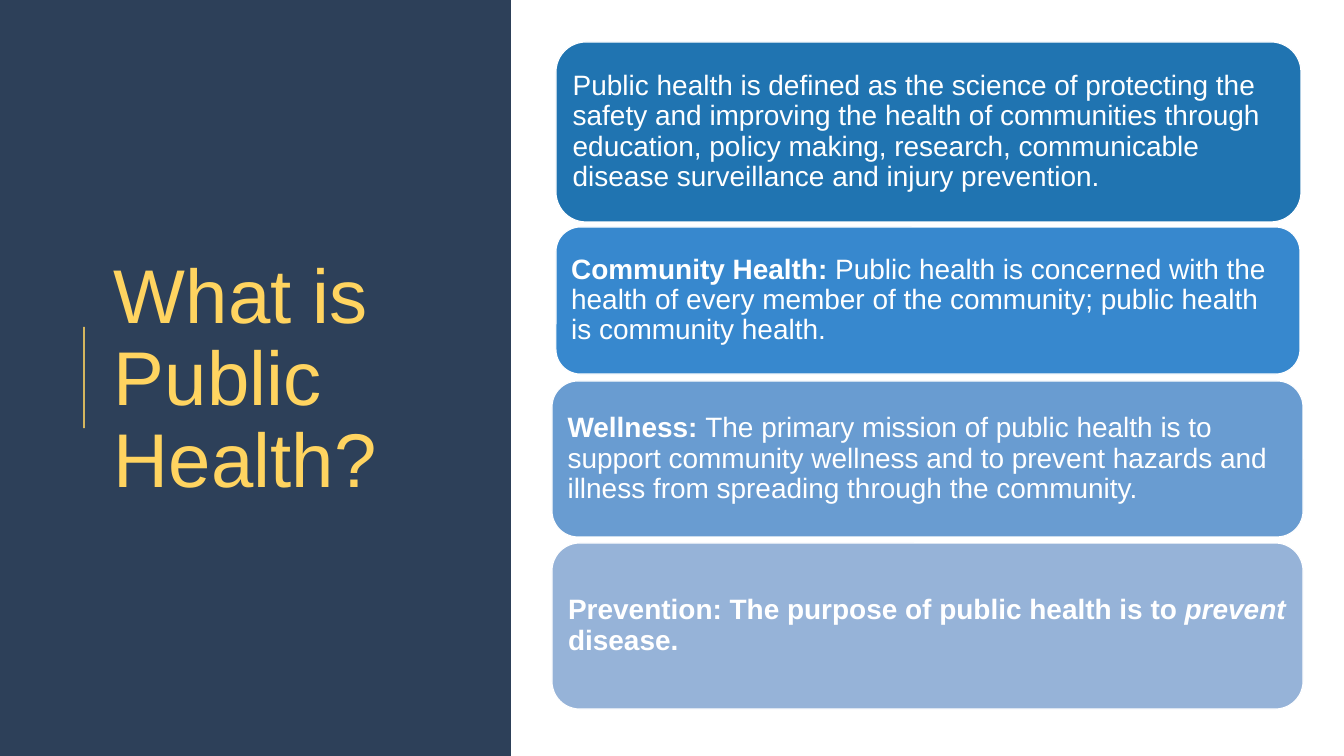
from pptx import Presentation
from pptx.dml.color import RGBColor
from pptx.enum.shapes import MSO_CONNECTOR, MSO_SHAPE
from pptx.enum.text import MSO_ANCHOR, MSO_AUTO_SIZE, PP_ALIGN
from pptx.oxml.ns import qn
from pptx.util import Pt
from lxml import etree

RECT, ROUNDED = MSO_SHAPE.RECTANGLE, MSO_SHAPE.ROUNDED_RECTANGLE
STRAIGHT = MSO_CONNECTOR.STRAIGHT
MIDDLE, LEFT = MSO_ANCHOR.MIDDLE, PP_ALIGN.LEFT
NO_FIT = MSO_AUTO_SIZE.NONE

PX = 11340  # EMU per px
FONT = "Arial"
COLORS = {
    "navy": "2D4059", "gold": "FFD460", "white": "FFFFFF",
    "definition": "2074B1", "community": "3788CE",
    "wellness": "699CD1", "prevention": "96B3D8",
}


def rgb(name):
    return RGBColor.from_string(COLORS[name])


def format_text(tf, size, color, inset_x, inset_y):
    tf.word_wrap = True
    tf.auto_size = NO_FIT
    tf.vertical_anchor = MIDDLE
    tf.margin_left = tf.margin_right = inset_x * PX
    tf.margin_top = tf.margin_bottom = inset_y * PX
    p = tf.paragraphs[0]
    p.alignment = LEFT
    p.line_spacing = 0.9
    for r in p.runs:
        r.font.name = FONT
        r.font.size = Pt(size)
        r.font.color.rgb = rgb(color)


prs = Presentation()
prs.slide_width, prs.slide_height = 1344 * PX, 756 * PX
s = prs.slides.add_slide(prs.slide_layouts[5])

# Title on the dark panel
title = s.shapes.title
title.left, title.top, title.width, title.height = (v * PX for v in (104, 78, 372, 606))
title.text_frame.text = "What is Public Health?"
format_text(title.text_frame, 68, "gold", 10, 5)

panel = s.shapes.add_shape(RECT, 0, 0, 511 * PX, 756 * PX)
panel.shadow.inherit = False
panel.fill.solid()
panel.fill.fore_color.rgb = rgb("navy")
panel.line.fill.background()
title.element.addprevious(panel.element)

# Accent line beside the title
accent = s.shapes.add_connector(STRAIGHT, 84 * PX, 428 * PX, 84 * PX, 327 * PX)
accent.line.color.rgb = rgb("gold")
accent.line.width = Pt(1.5)
props = accent.element.spPr
etree.SubElement(props.find(".//" + qn("a:srgbClr")), qn("a:alpha"), val="80000")
etree.SubElement(props, qn("a:effectLst"))

# Cards: colour, box in px, runs as (text, bold, italic)
cards = [
    ("definition", (556, 42, 745, 180), [
        ("Public health is defined as the science of protecting the safety and "
         "improving the health of communities through education, policy making, "
         "research, communicable disease surveillance and injury prevention.", False, False)]),
    ("community", (556, 227, 744, 147), [
        ("Community Health: ", True, False),
        ("Public health is concerned with the health of every member of the "
         "community; public health is community health.", False, False)]),
    ("wellness", (552, 381, 751, 156), [
        ("Wellness: ", True, False),
        ("The primary mission of public health is to support community wellness and "
         "to prevent hazards and illness from spreading through the community.", False, False)]),
    ("prevention", (552, 543, 751, 166), [
        ("Prevention: The purpose of public health is to ", True, False),
        ("prevent", True, True),
        (" disease.", True, False)]),
]
for color, box, runs in cards:
    card = s.shapes.add_shape(ROUNDED, *(v * PX for v in box))
    card.shadow.inherit = False
    card.fill.solid()
    card.fill.fore_color.rgb = rgb(color)
    card.line.color.rgb = rgb("white")
    card.line.width = Pt(1)
    p = card.text_frame.paragraphs[0]
    for text, bold, italic in runs:
        r = p.add_run()
        r.text = text
        r.font.bold, r.font.italic = bold, italic
    format_text(card.text_frame, 25, "white", 8, 8)

prs.save("out.pptx")
